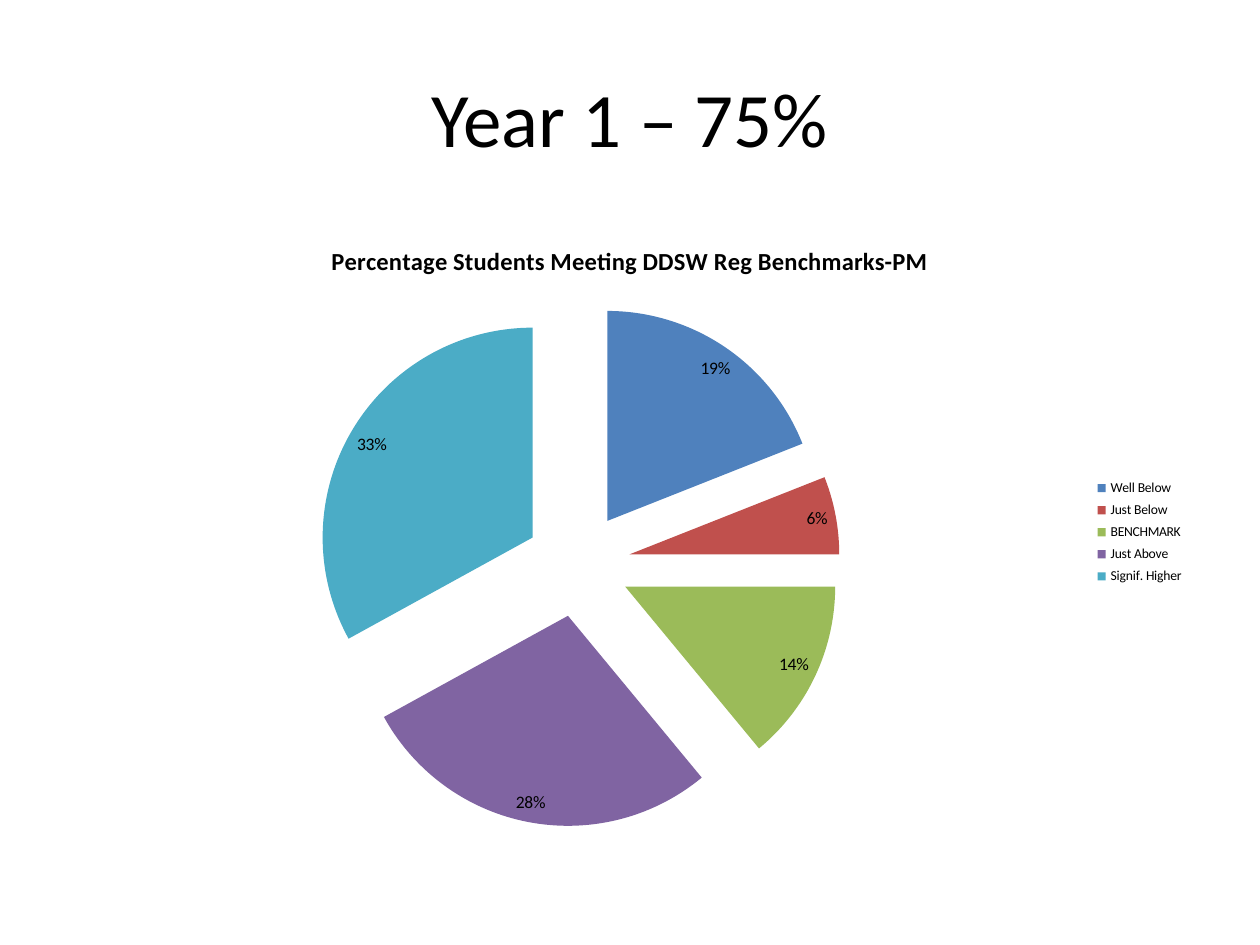
from lxml import etree
from pptx import Presentation
from pptx.chart.data import CategoryChartData
from pptx.dml.color import RGBColor
from pptx.enum.chart import XL_CHART_TYPE, XL_LABEL_POSITION, XL_LEGEND_POSITION
from pptx.enum.text import MSO_ANCHOR, PP_ALIGN
from pptx.oxml.ns import qn
from pptx.util import Inches, Pt

PIE = XL_CHART_TYPE.PIE
BEST_FIT = XL_LABEL_POSITION.BEST_FIT
RIGHT = XL_LEGEND_POSITION.RIGHT
MIDDLE = MSO_ANCHOR.MIDDLE
CENTER = PP_ALIGN.CENTER

FONT = "Calibri"
COLORS = {
    "text": "000000",
    "Well Below": "4F81BD",
    "Just Below": "C0504D",
    "BENCHMARK": "9BBB59",
    "Just Above": "8064A2",
    "Signif. Higher": "4BACC6",
}
SHARES = {
    "Well Below": 0.19,
    "Just Below": 0.06,
    "BENCHMARK": 0.14,
    "Just Above": 0.28,
    "Signif. Higher": 0.33,
}
EXPLOSION = 25  # percent of the radius


def style_font(font, size, bold=False):
    font.name = FONT
    font.size = Pt(size)
    font.bold = bold
    font.color.rgb = RGBColor.from_string(COLORS["text"])


def add_heading(slide, left, top, width, height):
    heading = slide.shapes.add_textbox(left, top, width, height)
    frame = heading.text_frame
    frame.word_wrap = True
    frame.vertical_anchor = MIDDLE
    paragraph = frame.paragraphs[0]
    paragraph.alignment = CENTER
    run = paragraph.add_run()
    run.text = "Year 1 – 75%"
    style_font(run.font, 44)


def explode_slices(series):
    """Pull all slices apart; the element must follow the series name."""
    explosion = etree.Element(qn("c:explosion"), val=str(EXPLOSION))
    series._element.find(qn("c:tx")).addnext(explosion)


def add_benchmark_pie(slide, left, top, width, height):
    data = CategoryChartData(number_format="0%")
    data.categories = list(SHARES)
    data.add_series("Series 1", list(SHARES.values()))
    chart = slide.shapes.add_chart(PIE, left, top, width, height, data).chart
    style_font(chart.font, 10)

    chart.has_title = True
    title_run = chart.chart_title.text_frame.paragraphs[0].add_run()
    title_run.text = "Percentage Students Meeting DDSW Reg Benchmarks-PM"
    style_font(title_run.font, 14, bold=True)

    chart.has_legend = True
    chart.legend.position = RIGHT
    chart.legend.include_in_layout = False
    style_font(chart.legend.font, 7.8)

    plot = chart.plots[0]
    plot.vary_by_categories = True
    shares = plot.series[0]
    explode_slices(shares)
    for index, level in enumerate(SHARES):
        fill = shares.points[index].format.fill
        fill.solid()
        fill.fore_color.rgb = RGBColor.from_string(COLORS[level])

    labels = shares.data_labels
    labels.show_value = True
    labels.number_format = "0%"
    labels.number_format_is_linked = False
    labels.position = BEST_FIT
    style_font(labels.font, 10)


def main():
    deck = Presentation()
    deck.slide_width, deck.slide_height = Inches(10), Inches(7.5)
    slide = deck.slides.add_slide(deck.slide_layouts[6])
    margin, content_width = Inches(0.5), Inches(9)
    add_heading(slide, margin, Inches(0.3), content_width, Inches(1.25))
    add_benchmark_pie(slide, margin, Inches(1.75), content_width, Inches(4.95))
    deck.save("out.pptx")


if __name__ == "__main__":
    main()
